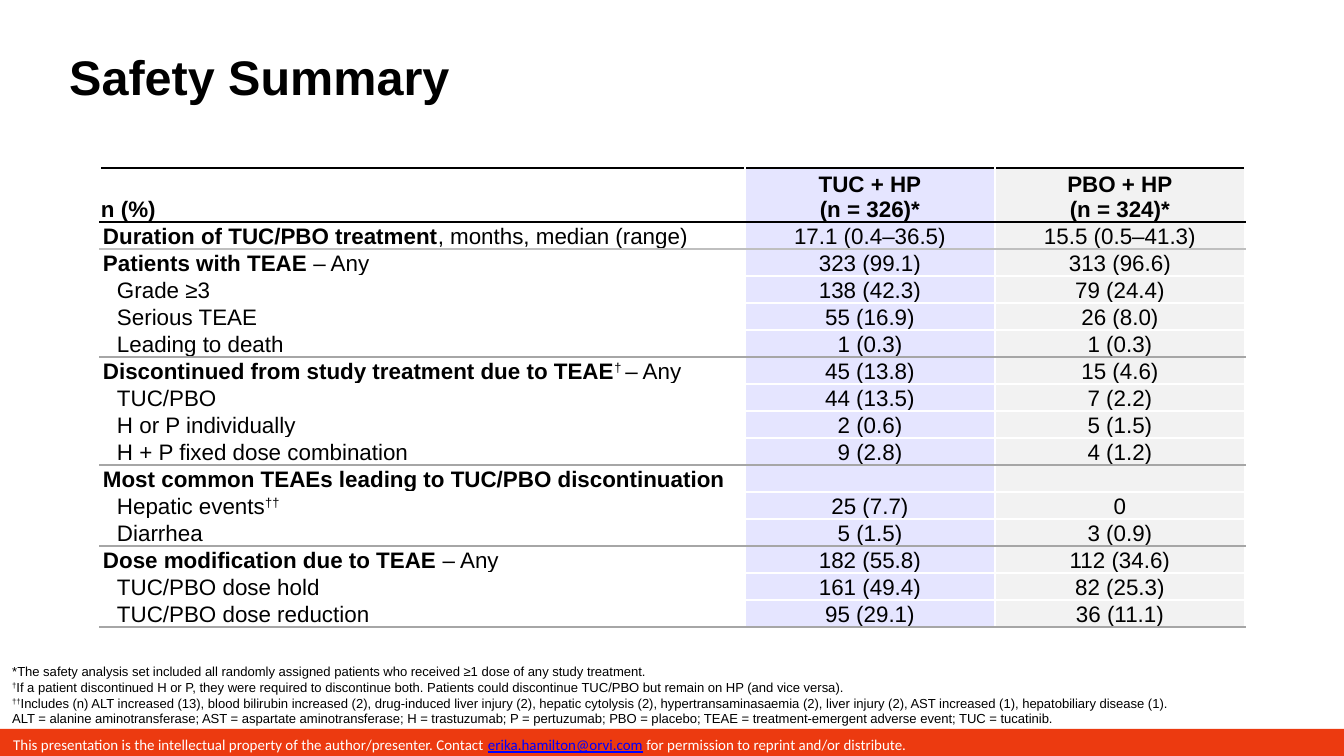
from copy import deepcopy

from lxml.etree import SubElement
from pptx import Presentation
from pptx.dml.color import RGBColor
from pptx.enum.shapes import MSO_SHAPE as Shape
from pptx.enum.text import MSO_ANCHOR as Anchor, PP_ALIGN as Align
from pptx.oxml.ns import qn
from pptx.util import Pt

EMU_PER_PX = 914400 / 134.4

BLACK = RGBColor(0x00, 0x00, 0x00)
WHITE = RGBColor(0xFF, 0xFF, 0xFF)
BLUE = RGBColor(0x00, 0x00, 0xFF)
RED = RGBColor(0xEC, 0x3A, 0x10)
PALE_GREY = RGBColor(0xF2, 0xF2, 0xF2)
LIGHT_RULE = RGBColor(0xBF, 0xBF, 0xBF)
GREY_RULE = RGBColor(0xA6, 0xA6, 0xA6)

BOLD = {"bold": True}
SUPER = {"superscript": True}
COLUMN_WIDTHS = (645, 250, 250)
HEADER_HEIGHT, ROW_HEIGHT, INDENT = 54, 27, 14

# Each row: label runs, TUC value, PBO value, indented, rule below
ROWS = [
    ([("n (%)", BOLD)], "TUC + HP\n(n = 326)*", "PBO + HP\n(n = 324)*", False, BLACK),
    ([("Duration of TUC/PBO treatment", BOLD), ", months, median (range)"],
     "17.1 (0.4–36.5)", "15.5 (0.5–41.3)", False, LIGHT_RULE),
    ([("Patients with TEAE ", BOLD), "– Any"], "323 (99.1)", "313 (96.6)", False, WHITE),
    (["Grade ≥3"], "138 (42.3)", "79 (24.4)", True, WHITE),
    (["Serious TEAE"], "55 (16.9)", "26 (8.0)", True, WHITE),
    (["Leading to death"], "1 (0.3)", "1 (0.3)", True, GREY_RULE),
    ([("Discontinued from study treatment due to TEAE", BOLD), ("† ", SUPER), "– Any"],
     "45 (13.8)", "15 (4.6)", False, WHITE),
    (["TUC/PBO"], "44 (13.5)", "7 (2.2)", True, WHITE),
    (["H or P individually"], "2 (0.6)", "5 (1.5)", True, WHITE),
    (["H + P fixed dose combination"], "9 (2.8)", "4 (1.2)", True, GREY_RULE),
    ([("Most common TEAEs leading to TUC/PBO discontinuation", BOLD)], "", "", False, WHITE),
    (["Hepatic events", ("††", SUPER)], "25 (7.7)", "0", True, WHITE),
    (["Diarrhea"], "5 (1.5)", "3 (0.9)", True, GREY_RULE),
    ([("Dose modification due to TEAE ", BOLD), "– Any"], "182 (55.8)", "112 (34.6)", False, WHITE),
    (["TUC/PBO dose hold"], "161 (49.4)", "82 (25.3)", True, WHITE),
    (["TUC/PBO dose reduction"], "95 (29.1)", "36 (11.1)", True, GREY_RULE),
]

FOOTNOTES = [
    ["*The safety analysis set included all randomly assigned patients who received "
     "≥1 dose of any study treatment."],
    [("†", SUPER), "If a patient discontinued H or P, they were required to discontinue both. "
     "Patients could discontinue TUC/PBO but remain on HP (and vice versa)."],
    [("††", SUPER), "Includes (n) ALT increased (13), blood bilirubin increased (2), drug-induced "
     "liver injury (2), hepatic cytolysis (2), hypertransaminasaemia (2), liver injury (2), "
     "AST increased (1), hepatobiliary disease (1)."],
    ["ALT = alanine aminotransferase; AST = aspartate aminotransferase; H = trastuzumab; "
     "P = pertuzumab; PBO = placebo; TEAE = treatment-emergent adverse event; TUC = tucatinib."],
]

NOTICE = [[
    "This presentation is the intellectual property of the author/presenter. Contact ",
    ("erika.hamilton@orvi.com", {"color": BLUE, "underline": True}),
    " for permission to reprint and/or distribute.",
]]


def px(length):
    return round(length * EMU_PER_PX)


def add_run(paragraph, text, size, font, color, bold=False, underline=False, superscript=False):
    for number, line in enumerate(text.split("\n")):
        if number:
            paragraph.add_line_break()
            paragraph._p[-1].append(deepcopy(run._r.rPr))
        run = paragraph.add_run()
        run.text = line
        run.font.size = Pt(size)
        run.font.name = font
        run.font.color.rgb = color
        run.font.bold = bold
        run.font.underline = underline
        if superscript:
            run._r.rPr.set("baseline", "30000")


def write(frame, paragraphs, size, font="Arial", color=BLACK, align=Align.LEFT, indent=0, bold=False):
    """Fill a text frame; each paragraph is a list of strings or (string, format) pairs."""
    frame.word_wrap = True
    for number, runs in enumerate(paragraphs):
        paragraph = frame.add_paragraph() if number else frame.paragraphs[0]
        paragraph.alignment = align
        if indent:
            paragraph._p.get_or_add_pPr().set("marL", str(px(indent)))
        for item in runs:
            text, style = (item, {}) if isinstance(item, str) else item
            if text:
                add_run(paragraph, text, **{"size": size, "font": font, "color": color,
                                            "bold": bold, **style})
            else:
                SubElement(paragraph._p, qn("a:endParaRPr"), sz=str(size * 100))


def add_text(slide, box, paragraphs, anchor=Anchor.TOP, **style):
    frame = slide.shapes.add_textbox(*map(px, box)).text_frame
    frame.vertical_anchor = anchor
    write(frame, paragraphs, **style)


def set_borders(cell, top, bottom):
    properties = cell._tc.get_or_add_tcPr()
    sides = {"L": WHITE, "R": WHITE, "T": top, "B": bottom}
    for position, (side, color) in enumerate(sides.items()):
        line = SubElement(properties, qn(f"a:ln{side}"), w=str(Pt(1)))
        SubElement(SubElement(line, qn("a:solidFill")), qn("a:srgbClr"), val=str(color))
        properties.insert(position, line)


def fill_cell(cell, column):
    if column == 0:
        cell.fill.background()
        return
    cell.fill.solid()
    cell.fill.fore_color.rgb = BLUE if column == 1 else PALE_GREY
    if column == 1:
        color = cell._tc.tcPr.find(".//" + qn("a:srgbClr"))
        SubElement(color, qn("a:alpha"), val="10000")


def add_safety_table(slide, left, top):
    height = HEADER_HEIGHT + ROW_HEIGHT * (len(ROWS) - 1)
    box = map(px, (left, top, sum(COLUMN_WIDTHS), height))
    table = slide.shapes.add_table(len(ROWS), len(COLUMN_WIDTHS), *box).table
    table.first_row = table.horz_banding = False
    for column, width in zip(table.columns, COLUMN_WIDTHS):
        column.width = px(width)

    rule_above = BLACK
    for index, (label, tuc, pbo, indented, rule_below) in enumerate(ROWS):
        header = index == 0
        table.rows[index].height = px(HEADER_HEIGHT if header else ROW_HEIGHT)
        for column, runs in enumerate((label, [tuc], [pbo])):
            cell = table.cell(index, column)
            cell.margin_left = cell.margin_right = px(1 if header else 3)
            cell.margin_top = cell.margin_bottom = 0
            cell.vertical_anchor = Anchor.BOTTOM
            fill_cell(cell, column)
            set_borders(cell, rule_above, rule_below)
            write(cell.text_frame, [runs], size=12, bold=header,
                  align=Align.CENTER if column else Align.LEFT,
                  indent=INDENT if indented and column == 0 else 0)
        rule_above = rule_below


def add_notice_bar(slide, box):
    bar = slide.shapes.add_shape(Shape.RECTANGLE, *map(px, box))
    bar.shadow.inherit = False
    bar.fill.solid()
    bar.fill.fore_color.rgb = RED
    bar.line.fill.background()
    bar.text_frame.vertical_anchor = Anchor.TOP
    write(bar.text_frame, NOTICE, size=8, font="Calibri", color=WHITE)


def main():
    presentation = Presentation()
    presentation.slide_width, presentation.slide_height = px(1344), px(756)
    slide = presentation.slides.add_slide(presentation.slide_layouts[6])

    # Title
    add_text(slide, (56, 7, 853, 105), [["Safety Summary"]], anchor=Anchor.BOTTOM, size=26, bold=True)
    # Results
    add_safety_table(slide, 100, 168)
    # Footnotes and notice
    add_text(slide, (-1, 657, 1329, 77), FOOTNOTES, size=7)
    add_notice_bar(slide, (0, 729, 1344, 27))

    presentation.save("out.pptx")


if __name__ == "__main__":
    main()
